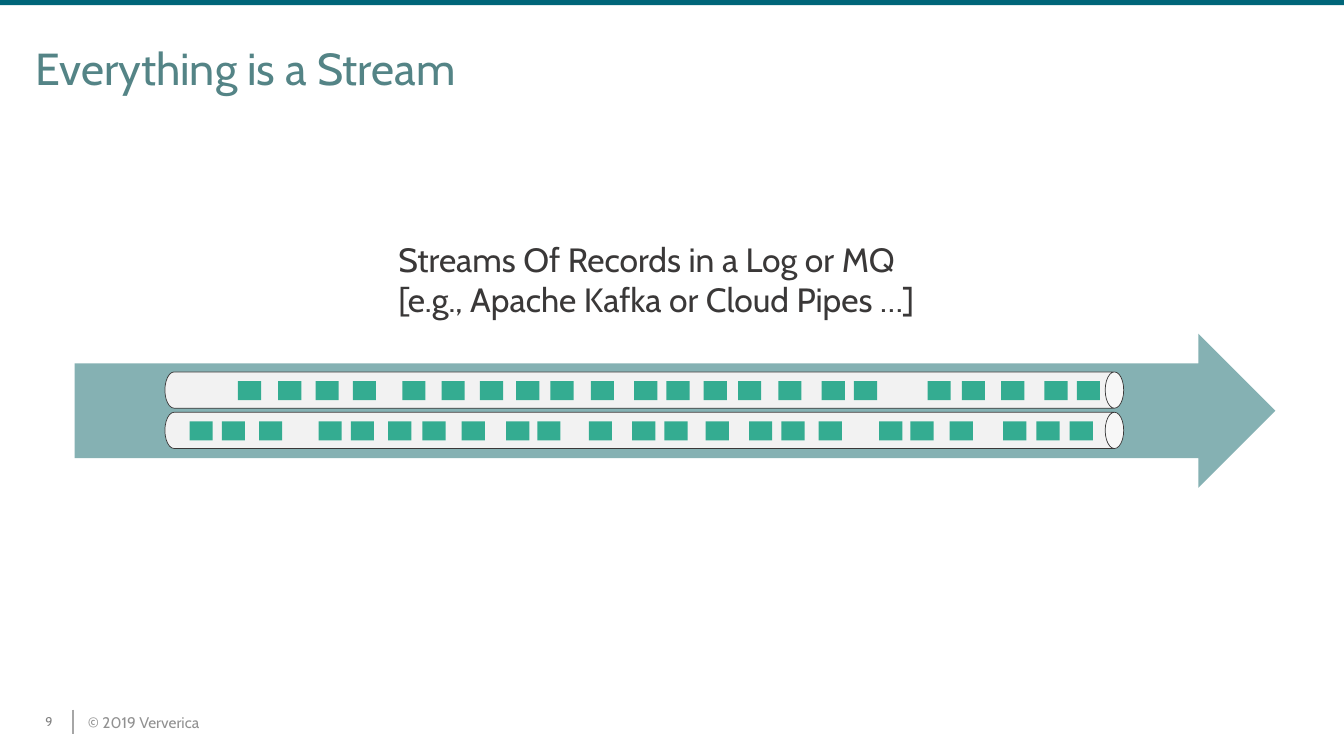
from dataclasses import dataclass

from lxml.etree import SubElement
from pptx import Presentation
from pptx.dml.color import RGBColor as RGB
from pptx.enum.shapes import MSO_CONNECTOR as Link, MSO_SHAPE as Kind
from pptx.enum.text import MSO_ANCHOR as Anchor, PP_ALIGN as Align
from pptx.oxml.ns import qn
from pptx.util import Inches, Pt


@dataclass(frozen=True)
class Theme:
    font: str = "Cabin"
    bar: str = "006679"
    title: str = "548486"
    arrow: str = "85B1B3"
    pipe: str = "F2F2F2"
    record: str = "34AC91"
    dark: str = "3A3838"
    rule: str = "A6A6A6"
    credit: str = "919191"
    number: str = "808080"
    title_size: int = 32
    label_size: int = 24
    credit_size: int = 11
    number_size: int = 9


THEME = Theme()

# Left edges of the records in each pipe
UPPER = (2.36, 2.76, 3.13, 3.5, 3.99, 4.38, 4.76, 5.12, 5.46, 5.86, 6.29,
         6.61, 6.98, 7.32, 7.72, 8.15, 8.47, 9.2, 9.54, 9.93, 10.36, 10.68)
LOWER = (1.88, 2.2, 2.57, 3.16, 3.48, 3.85, 4.19, 4.58, 5.02, 5.33, 5.84,
         6.27, 6.59, 7, 7.43, 7.75, 8.12, 8.72, 9.03, 9.42, 9.95, 10.28, 10.61)


def add_shape(slide, kind, box, fill, line=None, adjust=()):
    shape = slide.shapes.add_shape(kind, *map(Inches, box))
    shape.shadow.inherit = False
    shape.fill.solid()
    shape.fill.fore_color.rgb = RGB.from_string(fill)
    if line:
        shape.line.color.rgb = RGB.from_string(line)
        shape.line.width = Pt(0.5)
    else:
        shape.line.fill.background()
    for i, value in enumerate(adjust):
        shape.adjustments[i] = value
    return shape


def add_text(slide, box, text, size, color, align=Align.LEFT,
             anchor=Anchor.TOP, pad=(0, 0), wrap=True):
    frame = slide.shapes.add_textbox(*map(Inches, box)).text_frame
    frame.word_wrap = wrap
    frame.vertical_anchor = anchor
    frame.margin_left = frame.margin_right = Inches(pad[0])
    frame.margin_top = frame.margin_bottom = Inches(pad[1])
    para = frame.paragraphs[0]
    para.text = text
    para.alignment = align
    para.font.name = THEME.font
    para.font.size = Pt(size)
    para.font.color.rgb = RGB.from_string(color)


def add_rule(slide, x, top, end):
    rule = slide.shapes.add_connector(
        Link.STRAIGHT, Inches(x), Inches(top), Inches(x), Inches(end))
    rule.line.color.rgb = RGB.from_string(THEME.rule)
    rule.line.width = Pt(1.5)
    SubElement(rule._element.spPr, qn("a:effectLst"))


def add_pipe(slide, middle, records):
    """Lay a can on its side, centred on the height middle, with its records."""
    width, length, center = 0.36, 9.51, 6.39
    box = (center - width / 2, middle - length / 2, width, length)
    pipe = add_shape(slide, Kind.CAN, box, THEME.pipe, THEME.dark, (0.51,))
    pipe.rotation = 90
    for left in records:
        add_shape(slide, Kind.RECTANGLE, (left, middle - 0.09, 0.23, 0.19),
                  THEME.record)


def add_footer(slide):
    add_text(slide, (0.86, 7.07, 1.13, 0.19), "© 2019 Ververica",
             THEME.credit_size, THEME.credit, Align.CENTER, Anchor.MIDDLE,
             wrap=False)
    add_rule(slide, 0.72, 7.04, 7.28)
    add_text(slide, (0.37, 7.08, 0.23, 0.15), "9", THEME.number_size,
             THEME.number, Align.CENTER, Anchor.MIDDLE)


def main():
    deck = Presentation()
    deck.slide_width, deck.slide_height = Inches(13.33), Inches(7.5)
    slide = deck.slides.add_slide(deck.slide_layouts[6])

    add_shape(slide, Kind.RECTANGLE, (0, 0, 13.33, 0.05), THEME.bar)
    add_footer(slide)
    add_text(slide, (0.35, 0.4, 12.62, 0.54), "Everything is a Stream",
             THEME.title_size, THEME.title)

    add_shape(slide, Kind.RIGHT_ARROW, (0.74, 3.31, 11.91, 1.53), THEME.arrow,
              adjust=(0.615, 0.5))
    for middle, records in ((3.87, UPPER), (4.27, LOWER)):
        add_pipe(slide, middle, records)
    add_text(slide, (3.87, 2.33, 5.59, 0.89),
             "Streams Of Records in a Log or MQ\v"
             "[e.g., Apache Kafka or Cloud Pipes …]",
             THEME.label_size, THEME.dark, pad=(0.08, 0.04))

    deck.save("out.pptx")


if __name__ == "__main__":
    main()
